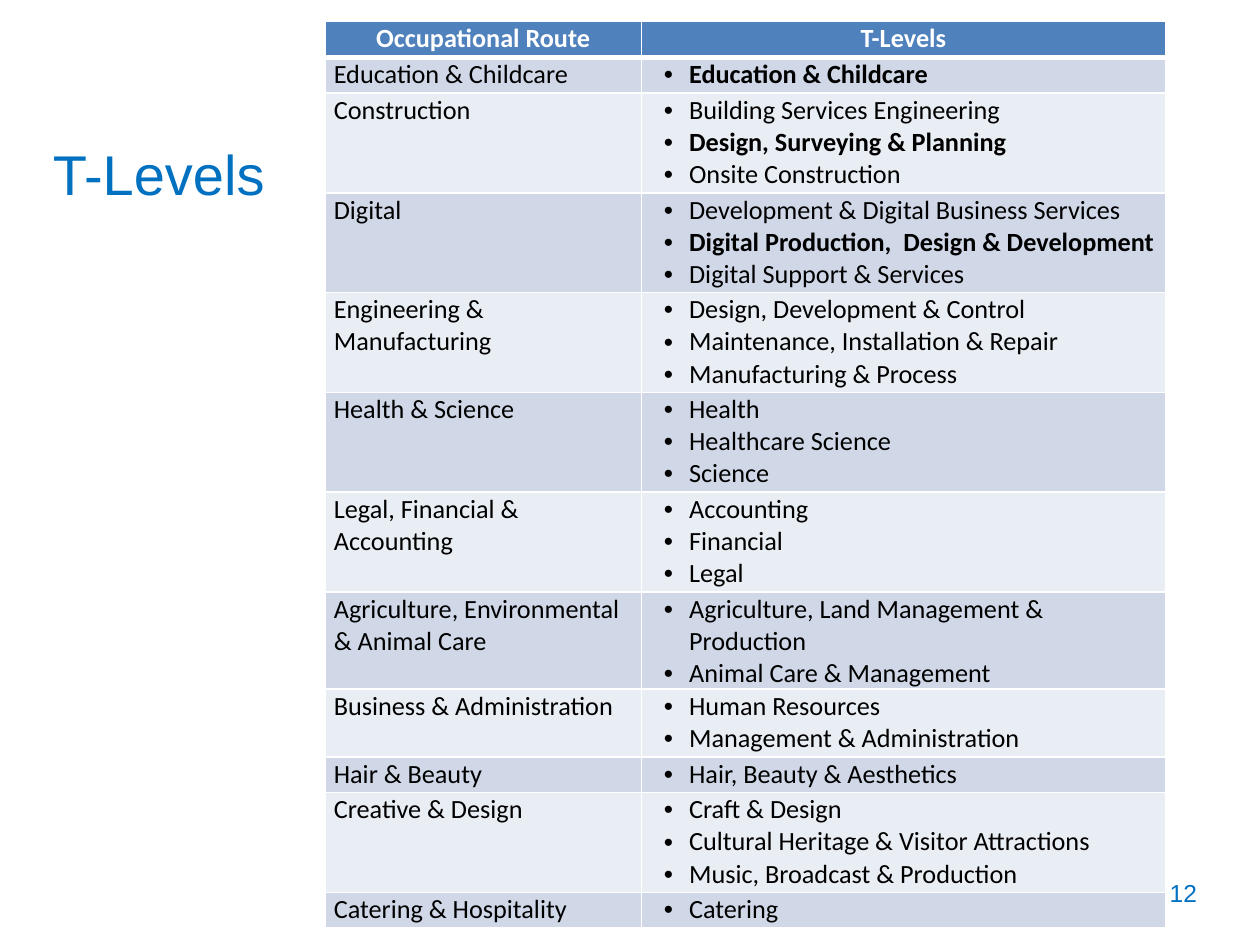
import pptx
import pptx.dml.color
import pptx.enum.text
import pptx.oxml
import pptx.oxml.ns
import pptx.util
from pptx.util import Inches

COLORS = {"accent": "0070C0", "header": "4F81BD", "odd": "D0D8E8",
          "even": "E9EDF4", "white": "FFFFFF", "black": "000000"}
HEADERS = ["Occupational Route", "T-Levels"]
ROUTES = [
    ("Education & Childcare", ["Education & Childcare"]),
    ("Construction", ["Building Services Engineering", "Design, Surveying & Planning",
                      "Onsite Construction"]),
    ("Digital", ["Development & Digital Business Services",
                 "Digital Production,  Design & Development",
                 "Digital Support & Services"]),
    ("Engineering & Manufacturing", ["Design, Development & Control",
                                     "Maintenance, Installation & Repair",
                                     "Manufacturing & Process"]),
    ("Health & Science", ["Health", "Healthcare Science", "Science"]),
    ("Legal, Financial & Accounting", ["Accounting", "Financial", "Legal"]),
    ("Agriculture, Environmental & Animal Care",
     ["Agriculture, Land Management & Production", "Animal Care & Management"]),
    ("Business & Administration", ["Human Resources", "Management & Administration"]),
    ("Hair & Beauty", ["Hair, Beauty & Aesthetics"]),
    ("Creative & Design", ["Craft & Design", "Cultural Heritage & Visitor Attractions",
                           "Music, Broadcast & Production"]),
    ("Catering & Hospitality", ["Catering"]),
]
BOLD = {"Education & Childcare", "Design, Surveying & Planning",
        "Digital Production,  Design & Development"}


def rgb(name):
    """Return the named colour."""
    return pptx.dml.color.RGBColor.from_string(COLORS[name])


def add_run(p, text, size, font, color, bold=False):
    """Add one formatted run to a paragraph."""
    r = p.add_run()
    r.text = text
    r.font.size = pptx.util.Pt(size)
    r.font.name = font
    r.font.bold = bold
    r.font.color.rgb = rgb(color)


def add_label(s, box, text, size, align, spacing=1.0):
    """Add a one-line accent text box."""
    tf = s.shapes.add_textbox(*map(Inches, box)).text_frame
    tf.word_wrap = True
    tf.margin_left = tf.margin_top = tf.margin_right = tf.margin_bottom = 0
    p = tf.paragraphs[0]
    p.alignment = align
    p.line_spacing = spacing
    add_run(p, text, size, "Arial", "accent")


def add_bullet(p):
    """Give a paragraph a hanging round bullet."""
    pPr = p._p.get_or_add_pPr()
    pPr.set("marL", str(Inches(0.31)))
    pPr.set("indent", str(Inches(-0.2)))
    ns = pptx.oxml.ns.nsdecls("a")
    pPr.append(pptx.oxml.parse_xml(f'<a:buFont {ns} typeface="Arial"/>'))
    pPr.append(pptx.oxml.parse_xml(f'<a:buChar {ns} char="•"/>'))


def set_borders(cell, top, bottom):
    """Draw white borders around a cell, with widths in points."""
    tcPr = cell._tc.get_or_add_tcPr()
    widths = {"lnL": 1, "lnR": 1, "lnT": top, "lnB": bottom}
    for i, (tag, width) in enumerate(widths.items()):
        tcPr.insert(i, pptx.oxml.parse_xml(
            f'<a:{tag} {pptx.oxml.ns.nsdecls("a")} w="{pptx.util.Pt(width)}">'
            f'<a:solidFill><a:srgbClr val="{COLORS["white"]}"/></a:solidFill></a:{tag}>'))


def fill_cell(cell, lines, row, bullets):
    """Write and style one table cell."""
    header = row == 0
    cell.margin_left = cell.margin_right = Inches(0.07)
    cell.margin_top = cell.margin_bottom = Inches(0.01)
    cell.fill.solid()
    cell.fill.fore_color.rgb = rgb("header" if header else "odd" if row % 2 else "even")
    set_borders(cell, 3 if row == 1 else 1, 3 if header else 1)
    tf = cell.text_frame
    for i, line in enumerate(lines):
        p = tf.add_paragraph() if i else tf.paragraphs[0]
        if bullets:
            add_bullet(p)
        if header:
            p.alignment = pptx.enum.text.PP_ALIGN.CENTER
        add_run(p, line, 15, "Calibri", "white" if header else "black",
                header or (bullets and line in BOLD))


def add_routes_table(s, box):
    """Add the table of occupational routes and their T-Levels."""
    rows = [(HEADERS[0], HEADERS[1:])] + ROUTES
    tbl = s.shapes.add_table(len(rows), 2, *map(Inches, box)).table
    tbl.columns[0].width = Inches(2.51)
    tbl.columns[1].width = Inches(box[2] - 2.51)
    for i, (route, levels) in enumerate(rows):
        tbl.rows[i].height = Inches(0.03) + len(levels) * pptx.util.Pt(18.3)
        fill_cell(tbl.cell(i, 0), [route], i, False)
        fill_cell(tbl.cell(i, 1), levels, i, i > 0)


def main():
    """Build and save the slide."""
    prs = pptx.Presentation()
    prs.slide_width, prs.slide_height = Inches(10), Inches(7.5)
    s = prs.slides.add_slide(prs.slide_layouts[6])
    align = pptx.enum.text.PP_ALIGN
    add_label(s, (0.42, 1.17, 8.24, 0.43), "T-Levels", 32, align.LEFT, 0.9)
    add_routes_table(s, (2.58, 0.17, 6.67, 7.1))
    add_label(s, (7.2, 6.97, 2.3, 0.38), "12", 14, align.RIGHT)
    prs.save("out.pptx")


if __name__ == "__main__":
    main()
